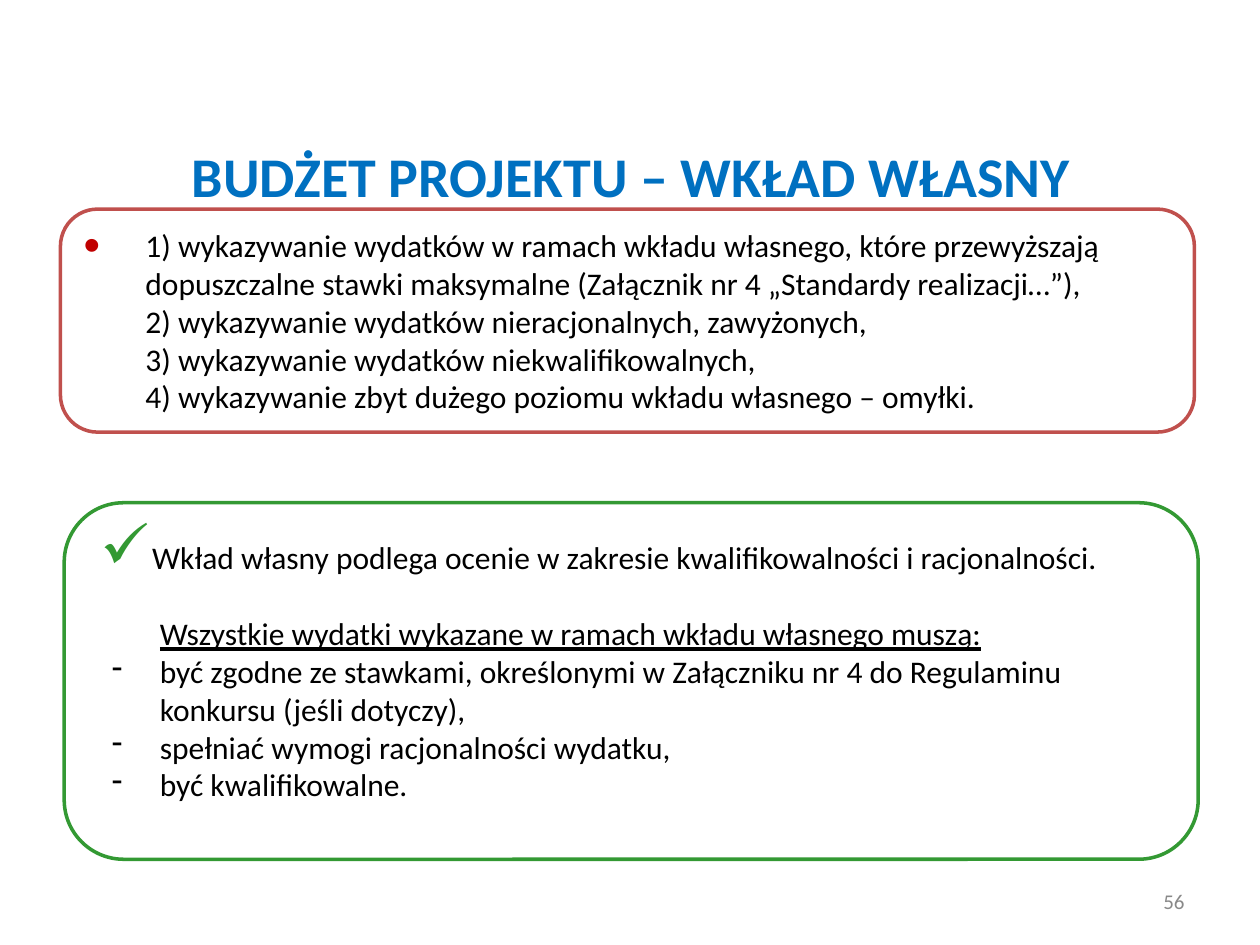
from dataclasses import dataclass
from typing import Optional

from lxml.etree import SubElement
from pptx import Presentation
from pptx.dml.color import RGBColor
from pptx.enum.shapes import MSO_SHAPE as Shape
from pptx.enum.text import MSO_ANCHOR as Anchor, MSO_AUTO_SIZE as AutoSize, PP_ALIGN as Align
from pptx.oxml.ns import qn
from pptx.util import Inches, Pt


@dataclass(frozen=True)
class Theme:
    font: str = "Calibri"
    title: str = "0070C0"
    text: str = "000000"
    number: str = "898989"
    warning: str = "C0504D"
    warning_bullet: str = "C00000"
    advice: str = "339933"
    title_size: int = 32
    body_size: int = 18
    number_size: int = 12
    border: int = 2


@dataclass(frozen=True)
class Box:
    """Left, top, width and height in percent of the slide."""
    x: float
    y: float
    w: float
    h: float

    def emu(self) -> tuple:
        return (int(W * self.x / 100), int(H * self.y / 100),
                int(W * self.w / 100), int(H * self.h / 100))


@dataclass(frozen=True)
class Bullet:
    char: str
    color: Optional[str] = None
    percent: int = 100
    font: Optional[str] = None


@dataclass(frozen=True)
class Line:
    """A paragraph; margin and hang are in percent of the slide's width."""
    text: str
    margin: float
    hang: float = 0
    bullet: Optional[Bullet] = None
    underline: bool = False
    before: int = 0


T = Theme()
W, H = Inches(10), Inches(7.5)

TITLE_BOX = Box(5.1, 15.33, 90, 6.4)
WARNING_BOX = Box(4.8, 22.13, 90, 23.6)
ADVICE_BOX = Box(5.1, 53.2, 90, 37.73)
ADVICE_TEXT = Box(5, 56.27, 89.8, 29.6)
NUMBER_BOX = Box(71.7, 92.67, 23.3, 5.33)

DOT = Bullet("•", T.warning_bullet, 150, "Arial")
CHECK = Bullet("✓", T.advice, 200)
DASH = Bullet("-")

WARNINGS = [
    Line("1) wykazywanie wydatków w ramach wkładu własnego, które przewyższają "
         "dopuszczalne stawki maksymalne (Załącznik nr 4 „Standardy realizacji…”),",
         4.9, 4.9, DOT),
    Line("2) wykazywanie wydatków nieracjonalnych, zawyżonych,", 4.9),
    Line("3) wykazywanie wydatków niekwalifikowalnych,", 4.9),
    Line("4) wykazywanie zbyt dużego poziomu wkładu własnego – omyłki.", 4.9),
]
REQUIREMENTS = [
    "być zgodne ze stawkami, określonymi w Załączniku nr 4 do Regulaminu "
    "konkursu (jeśli dotyczy),",
    "spełniać wymogi racjonalności wydatku,",
    "być kwalifikowalne.",
]
ADVICE = [
    Line("Wkład własny podlega ocenie w zakresie kwalifikowalności i racjonalności.",
         6.1, 4.1, CHECK),
    Line("Wszystkie wydatki wykazane w ramach wkładu własnego muszą:",
         6.7, underline=True, before=22),
    *(Line(text, 6.7, 3.8, DASH) for text in REQUIREMENTS),
]


def add_run(p, text: str, *, size: int = T.body_size, color: str = T.text,
            bold: bool = False, underline: bool = False) -> None:
    r = p.add_run()
    r.text = text
    f = r.font
    f.name, f.size, f.bold, f.underline = T.font, Pt(size), bold, underline
    f.color.rgb = RGBColor.from_string(color)


def add_bullet(pPr, bullet: Bullet) -> None:
    if bullet.color:
        SubElement(SubElement(pPr, qn("a:buClr")), qn("a:srgbClr"), val=bullet.color)
    SubElement(pPr, qn("a:buSzPct"), val=str(bullet.percent * 1000))
    if bullet.font:
        SubElement(pPr, qn("a:buFont"), typeface=bullet.font)
    SubElement(pPr, qn("a:buChar"), char=bullet.char)


def fill_lines(tf, lines: list[Line]) -> None:
    tf.word_wrap = True
    for i, line in enumerate(lines):
        p = tf.add_paragraph() if i else tf.paragraphs[0]
        pPr = p._p.get_or_add_pPr()
        pPr.set("marL", str(int(W * line.margin / 100)))
        pPr.set("indent", str(-int(W * line.hang / 100)))
        if line.bullet:
            add_bullet(pPr, line.bullet)
        p.alignment = Align.LEFT
        if line.before:
            p.space_before = Pt(line.before)
        add_run(p, line.text, underline=line.underline)


def add_frame(slide, box: Box, color: str):
    sp = slide.shapes.add_shape(Shape.ROUNDED_RECTANGLE, *box.emu())
    sp.shadow.inherit = False
    sp.fill.background()
    sp.line.color.rgb = RGBColor.from_string(color)
    sp.line.width = Pt(T.border)
    return sp


def add_title(slide, text: str) -> None:
    sp = slide.shapes.title
    sp.left, sp.top, sp.width, sp.height = TITLE_BOX.emu()
    tf = sp.text_frame
    tf.auto_size, tf.vertical_anchor = AutoSize.NONE, Anchor.MIDDLE
    p = tf.paragraphs[0]
    p.alignment = Align.CENTER
    add_run(p, text, size=T.title_size, color=T.title, bold=True)


def add_number(slide, text: str) -> None:
    tf = slide.shapes.add_textbox(*NUMBER_BOX.emu()).text_frame
    tf.word_wrap, tf.vertical_anchor = True, Anchor.MIDDLE
    p = tf.paragraphs[0]
    p.alignment = Align.RIGHT
    add_run(p, text, size=T.number_size, color=T.number)


def main() -> None:
    prs = Presentation()
    prs.slide_width, prs.slide_height = W, H
    slide = prs.slides.add_slide(prs.slide_layouts.get_by_name("Title Only"))

    add_title(slide, "BUDŻET PROJEKTU – WKŁAD WŁASNY")

    tf = add_frame(slide, WARNING_BOX, T.warning).text_frame
    tf.vertical_anchor = Anchor.MIDDLE
    fill_lines(tf, WARNINGS)

    add_frame(slide, ADVICE_BOX, T.advice)
    tf = slide.shapes.add_textbox(*ADVICE_TEXT.emu()).text_frame
    fill_lines(tf, ADVICE)

    add_number(slide, "56")
    prs.save("out.pptx")


if __name__ == "__main__":
    main()
